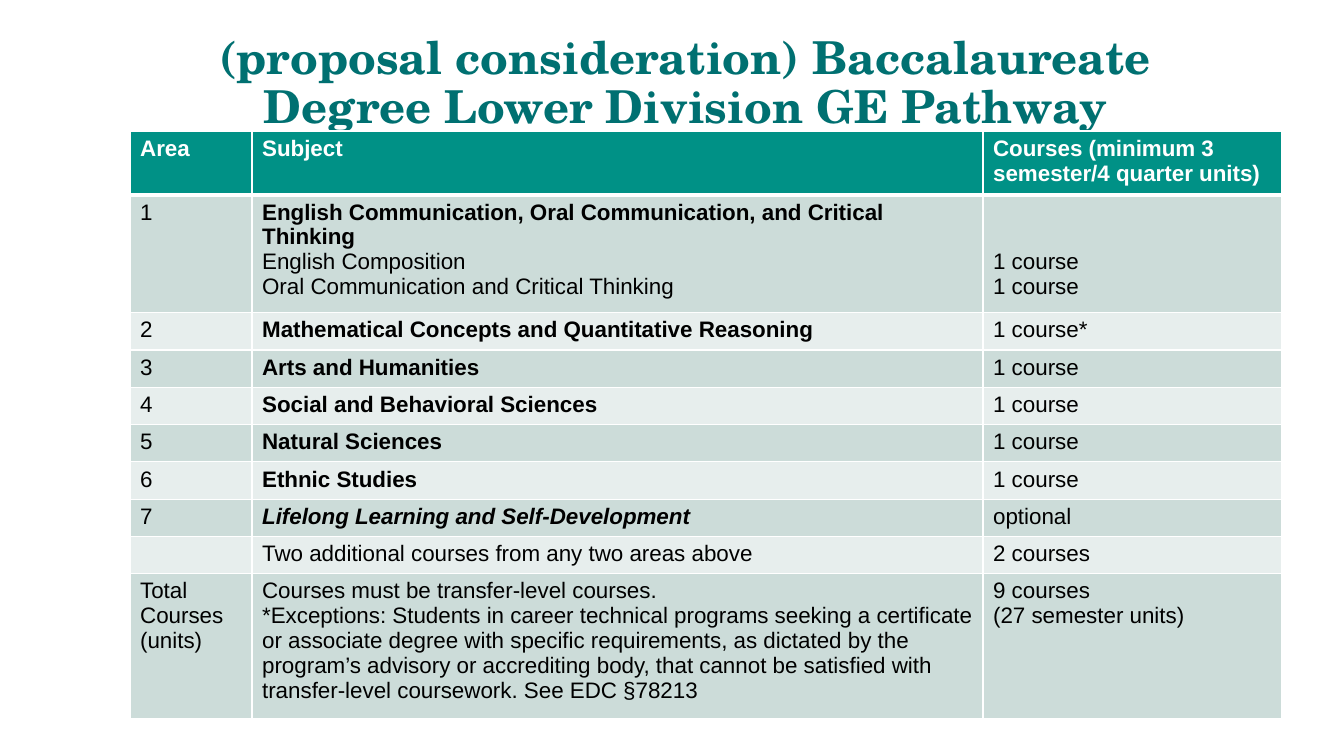
from lxml.etree import SubElement
from pptx import Presentation
from pptx.dml.color import RGBColor
from pptx.enum.text import MSO_ANCHOR, PP_ALIGN
from pptx.oxml.ns import qn
from pptx.util import Inches, Pt

COLORS = {
    "title": "007071",
    "header": "009186",
    "dark_band": "CCDCD9",
    "light_band": "E7EEED",
    "white": "FFFFFF",
    "black": "000000",
}
COLUMN_WIDTHS = [1.21, 7.25, 2.96]
ROW_HEIGHTS = [0.63, 1.17] + [0.37] * 7 + [1.43]
TWO_LINES = 0.49

# Each cell is a list of paragraphs: (text, style), style "b" bold, "i" italic.
ROWS = [
    [[("Area", "b")], [("Subject", "b")],
     [("Courses (minimum 3 semester/4 quarter units)", "b")]],
    [[("1", "")],
     [("English Communication, Oral Communication, and Critical Thinking", "b"),
      ("English Composition", ""),
      ("Oral Communication and Critical Thinking", "")],
     [("1 course", ""), ("1 course", "")]],
    [[("2", "")], [("Mathematical Concepts and Quantitative Reasoning", "b")],
     [("1 course*", "")]],
    [[("3", "")], [("Arts and Humanities", "b")], [("1 course", "")]],
    [[("4", "")], [("Social and Behavioral Sciences", "b")], [("1 course", "")]],
    [[("5", "")], [("Natural Sciences", "b")], [("1 course", "")]],
    [[("6", "")], [("Ethnic Studies", "b")], [("1 course", "")]],
    [[("7", "")], [("Lifelong Learning and Self-Development", "bi")],
     [("optional", "")]],
    [[], [("Two additional courses from any two areas above", "")],
     [("2 courses", "")]],
    [[("Total Courses (units)", "")],
     [("Courses must be transfer-level courses.", ""),
      ("*Exceptions: Students in career technical programs seeking a "
       "certificate or associate degree with specific requirements, as "
       "dictated by the program’s advisory or accrediting body, that cannot "
       "be satisfied with transfer-level coursework. See EDC §78213", "")],
     [("9 courses", ""), ("(27 semester units)", "")]],
]


def write_text(frame, paragraphs, size=16, font="Arial", color="black",
               align=PP_ALIGN.LEFT, line_spacing=None):
    for index, (text, style) in enumerate(paragraphs):
        paragraph = frame.add_paragraph() if index else frame.paragraphs[0]
        paragraph.alignment = align
        if line_spacing:
            paragraph.line_spacing = line_spacing
        run = paragraph.add_run()
        run.text = text
        run.font.name = font
        run.font.size = Pt(size)
        run.font.bold = "b" in style
        run.font.italic = "i" in style
        run.font.color.rgb = RGBColor.from_string(COLORS[color])


def set_borders(cell, top=1, bottom=1):
    """Draw white cell borders, with widths in points."""
    properties = cell._tc.get_or_add_tcPr()
    for side, width in (("L", 1), ("R", 1), ("T", top), ("B", bottom)):
        line = SubElement(properties, qn(f"a:ln{side}"), w=str(Pt(width)))
        fill = SubElement(line, qn("a:solidFill"))
        SubElement(fill, qn("a:srgbClr"), val=COLORS["white"])


def set_fill(cell, color):
    cell.fill.solid()
    cell.fill.fore_color.rgb = RGBColor.from_string(COLORS[color])


def add_title(slide, text):
    box = slide.shapes.add_textbox(
        Inches(1.29), Inches(0.4), Inches(11.01), Inches(0.87))
    frame = box.text_frame
    frame.word_wrap = True
    frame.vertical_anchor = MSO_ANCHOR.MIDDLE
    write_text(frame, [(text, "b")], size=32.4, font="TeX Gyre Schola",
               color="title", align=PP_ALIGN.CENTER, line_spacing=0.9)


def add_pathway_table(slide):
    table = slide.shapes.add_table(
        len(ROWS), len(COLUMN_WIDTHS), Inches(1.29), Inches(1.3),
        Inches(sum(COLUMN_WIDTHS)), Inches(sum(ROW_HEIGHTS))).table
    for column, width in zip(table.columns, COLUMN_WIDTHS):
        column.width = Inches(width)
    for row_index, (cells, height) in enumerate(zip(ROWS, ROW_HEIGHTS)):
        table.rows[row_index].height = Inches(height)
        is_header = row_index == 0
        band = "dark_band" if row_index % 2 else "light_band"
        for column_index, paragraphs in enumerate(cells):
            cell = table.cell(row_index, column_index)
            set_borders(cell, top=3 if row_index == 1 else 1,
                        bottom=3 if is_header else 1)
            set_fill(cell, "header" if is_header else band)
            write_text(cell.text_frame, paragraphs,
                       color="white" if is_header else "black")
            if not paragraphs:
                cell.margin_top = cell.margin_bottom = 0
    # Line the course counts up with the subjects below the two-line heading.
    table.cell(1, 2).margin_top = Inches(0.05 + TWO_LINES)


def main():
    presentation = Presentation()
    presentation.slide_width = Inches(13.33)
    presentation.slide_height = Inches(7.5)
    slide = presentation.slides.add_slide(presentation.slide_layouts[6])
    add_title(slide, "(proposal consideration) Baccalaureate Degree "
                     "Lower Division GE Pathway")
    add_pathway_table(slide)
    presentation.save("out.pptx")


if __name__ == "__main__":
    main()
